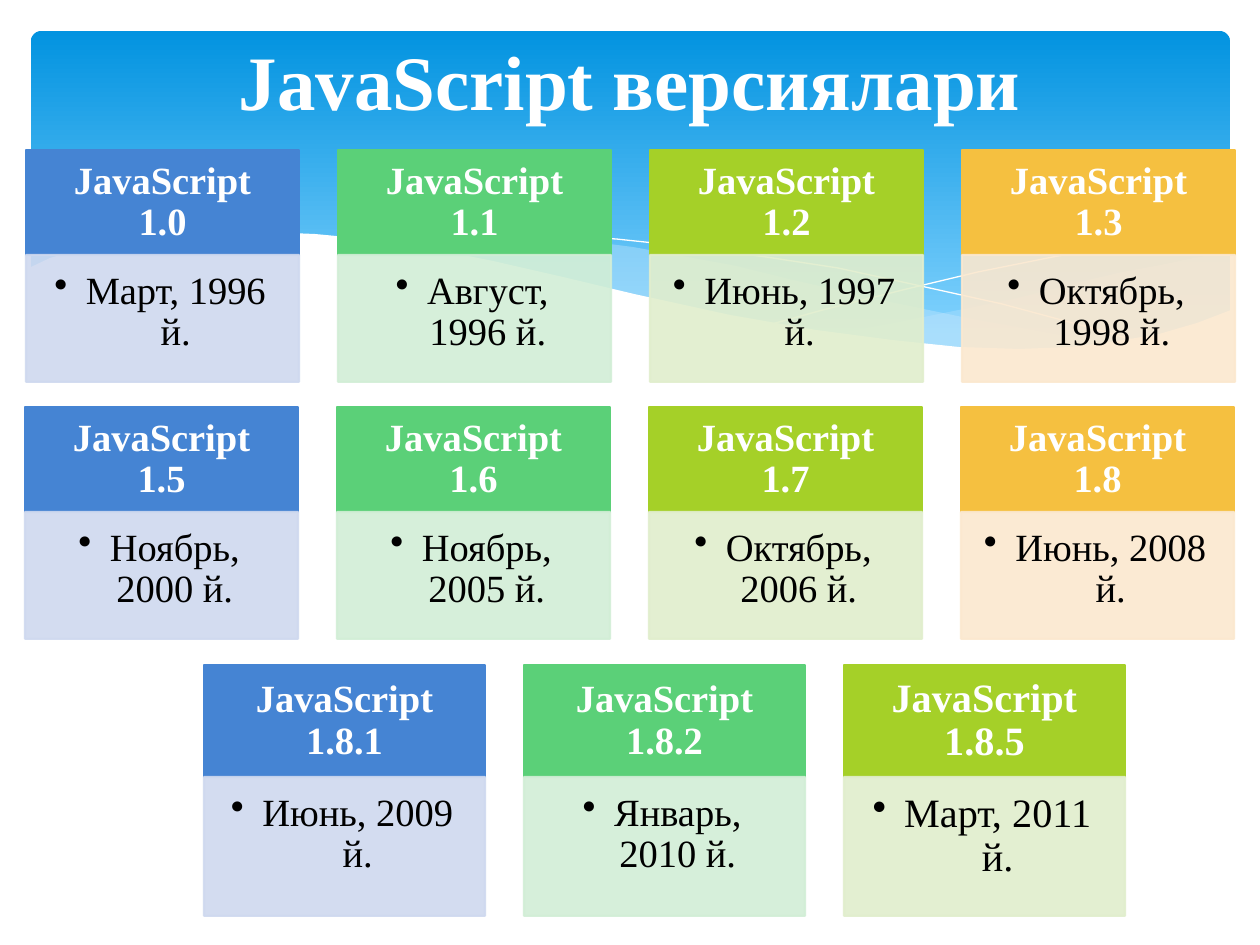
"""Build the slide that lists the JavaScript versions and their release dates."""
from lxml.etree import SubElement
from pptx import Presentation
from pptx.dml.color import RGBColor
from pptx.enum.shapes import MSO_SHAPE
from pptx.enum.text import MSO_ANCHOR, MSO_AUTO_SIZE, PP_ALIGN
from pptx.oxml.ns import qn
from pptx.util import Inches, Pt

PX = Inches(1) / 126
FONT = "Times New Roman"
TITLE = "JavaScript версиялари"
SHADES = [("4584D3", "CFD9EF"), ("5BD078", "D2EED6"), ("A5D028", "E1EECD"), ("F5C040", "FBE8CF")]

ROWS = [
    {"left": 26, "top": 150, "pitch": 312, "width": 273, "head": 105, "body": 127, "versions": [
        ("1.0", "Март, 1996 й.", 22), ("1.1", "Август, 1996 й.", 22),
        ("1.2", "Июнь, 1997 й.", 22), ("1.3", "Октябрь, 1998 й.", 22)]},
    {"left": 25, "top": 407, "pitch": 312, "width": 273, "head": 105, "body": 127, "versions": [
        ("1.5", "Ноябрь, 2000 й.", 22), ("1.6", "Ноябрь, 2005 й.", 22),
        ("1.7", "Октябрь, 2006 й.", 22), ("1.8", "Июнь, 2008 й.", 22)]},
    {"left": 204, "top": 665, "pitch": 320, "width": 281, "head": 112, "body": 139, "versions": [
        ("1.8.1", "Июнь, 2009 й.", 22), ("1.8.2", "Январь, 2010 й.", 22),
        ("1.8.5", "Март, 2011 й.", 23)]},
]

RIGHT_WAVE = [
    (1229, 252), (1194, 258), (1161, 265), (1123, 272), (1085, 281), (1014, 299), (949, 312),
    (890, 324), (833, 334), (871, 339), (922, 345), (969, 349), (1012, 350), (1052, 349),
    (1099, 345), (1140, 339), (1178, 330), (1213, 318), (1230, 311), (1230, 252)]
MIDDLE_WAVE = [
    (1125, 344), (1055, 334), (977, 320), (890, 302), (793, 280), (736, 266), (682, 256),
    (633, 247), (586, 241), (529, 236), (479, 233), (433, 234), (394, 237), (360, 241),
    (431, 251), (509, 266), (566, 280), (668, 302), (757, 321), (838, 335), (910, 345),
    (974, 349), (1031, 350), (1080, 349)]
FALLING_LINE = [
    (389, 246), (433, 239), (488, 236), (546, 236), (616, 239), (701, 248), (766, 257),
    (838, 268), (916, 285), (1002, 304), (1095, 329), (1143, 343)]
RISING_LINE = [
    (772, 324), (823, 310), (907, 289), (978, 272), (1053, 257), (1110, 247), (1164, 239),
    (1198, 236), (1229, 233)]
WHITE_WAVE = [
    (1231, 310), (1197, 323), (1159, 334), (1118, 341), (1071, 347), (1019, 349), (959, 347),
    (892, 340), (816, 330), (730, 315), (634, 294), (563, 277), (493, 261), (428, 248),
    (368, 239), (315, 234), (266, 232), (223, 232), (184, 233), (150, 236), (119, 241),
    (96, 246), (74, 251), (50, 258), (29, 268), (29, 415), (1231, 415)]
WAVES = [(RIGHT_WAVE, "C6E7FC", 29), (MIDDLE_WAVE, "C6E7FC", 40),
         (FALLING_LINE, None, 100), (RISING_LINE, None, 100), (WHITE_WAVE, "FFFFFF", 100)]


def emu(*lengths):
    return [round(length * PX) for length in lengths]


def color(code):
    return RGBColor.from_string(code)


def paint(fill, code, opacity=100):
    fill.solid()
    fill.fore_color.rgb = color(code)
    if opacity < 100:
        rgb = fill._xPr.find(".//" + qn("a:srgbClr"))
        SubElement(rgb, qn("a:alpha"), val=str(opacity * 1000))


def write(frame, text, size, code, bold, insets, anchor):
    frame.word_wrap = True
    frame.auto_size = MSO_AUTO_SIZE.NONE
    frame.vertical_anchor = anchor
    frame.margin_left, frame.margin_top, frame.margin_right, frame.margin_bottom = emu(*insets)
    paragraph = frame.paragraphs[0]
    paragraph.alignment = PP_ALIGN.CENTER
    run = paragraph.add_run()
    run.text = text
    run.font.name, run.font.size, run.font.bold = FONT, Pt(size), bold
    run.font.color.rgb = color(code)
    return paragraph


def add_backdrop(shapes):
    banner = shapes.add_shape(MSO_SHAPE.ROUNDED_RECTANGLE, *emu(31, 31, 1199, 341))
    banner.adjustments[0] = 0.03
    banner.shadow.inherit = False
    banner.line.fill.background()
    banner.fill.gradient()
    banner.fill.gradient_angle = 270
    for stop, (position, code) in zip(banner.fill.gradient_stops, [(0, "0293E0"), (0.9, "83D3FE")]):
        stop.position = position
        stop.color.rgb = color(code)
    for points, code, opacity in WAVES:
        builder = shapes.build_freeform(*points[0], scale=PX)
        builder.add_line_segments(points[1:], close=code is not None)
        wave = builder.convert_to_shape()
        wave.shadow.inherit = False
        if code:
            paint(wave.fill, code, opacity)
            wave.line.fill.background()
        else:
            wave.fill.background()
            paint(wave.line.fill, "FFFFFF")
            wave.line.width = Pt(0)


def add_panel(shapes, place, code, opacity=100):
    panel = shapes.add_shape(MSO_SHAPE.RECTANGLE, *emu(*place))
    panel.shadow.inherit = False
    paint(panel.fill, code, opacity)
    paint(panel.line.fill, code, opacity)
    panel.line.width = Pt(1.25)
    return panel.text_frame


def add_version(shapes, row, column):
    version, date, size = row["versions"][column]
    dark, pale = SHADES[column]
    left, top = row["left"] + column * row["pitch"], row["top"]
    head = add_panel(shapes, (left, top, row["width"], row["head"]), dark)
    name = write(head, f"JavaScript {version}", size, "FFFFFF", True, (21, 13, 21, 13), MSO_ANCHOR.MIDDLE)
    name.line_spacing = 0.9
    body = add_panel(shapes, (left, top + row["head"], row["width"], row["body"]), pale, 90)
    release = write(body, date, size, "000000", False, (16, 16, 21, 24), MSO_ANCHOR.TOP)
    release.level = 1
    properties = release._p.get_or_add_pPr()
    properties.set("marL", str(Inches(0.25)))
    properties.set("indent", str(-Inches(0.25)))
    SubElement(properties, qn("a:buChar"), char="•")
    release.line_spacing = 0.9


def main():
    presentation = Presentation()
    presentation.slide_width, presentation.slide_height = Inches(10), Inches(7.5)
    slide = presentation.slides.add_slide(presentation.slide_layouts[5])
    shapes = slide.shapes
    add_backdrop(shapes)
    title = shapes.title
    title.left, title.top, title.width, title.height = emu(63, 26, 1134, 108)
    write(title.text_frame, TITLE, 44, "FFFFFF", True, (13, 6, 13, 6), MSO_ANCHOR.MIDDLE)
    shapes.element.append(title.element)
    for row in ROWS:
        for column in range(len(row["versions"])):
            add_version(shapes, row, column)
    presentation.save("out.pptx")


if __name__ == "__main__":
    main()
